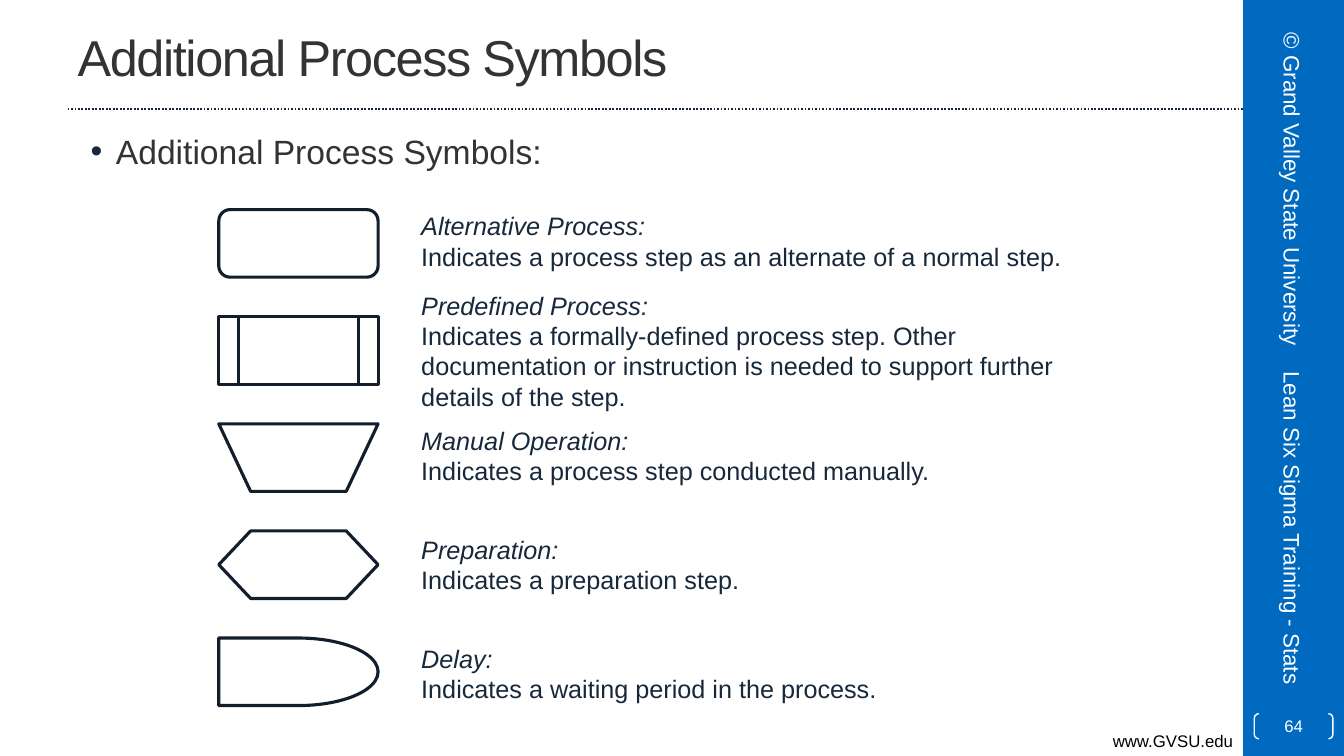
from lxml.etree import SubElement
from pptx import Presentation
from pptx.dml.color import RGBColor
from pptx.enum.dml import MSO_LINE
from pptx.enum.shapes import MSO_CONNECTOR, MSO_SHAPE
from pptx.enum.text import MSO_ANCHOR, MSO_AUTO_SIZE, PP_ALIGN
from pptx.oxml.ns import qn
from pptx.util import Inches, Pt

COLORS = {
    "band": "0069C0",
    "rule": "17273B",
    "heading": "333333",
    "text": "18283B",
    "outline": "121E2C",
    "white": "FFFFFF",
    "black": "000000",
}
FONT = "Arial"

# Symbol, text top, text height, name, meaning
SYMBOLS = [
    (MSO_SHAPE.FLOWCHART_ALTERNATE_PROCESS, 2.04, 0.71, "Alternative Process:",
     "Indicates a process step as an alternate of a normal step."),
    (MSO_SHAPE.FLOWCHART_PREDEFINED_PROCESS, 2.83, 1.31, "Predefined Process:",
     "Indicates a formally-defined process step. Other documentation or "
     "instruction is needed to support further details of the step."),
    (MSO_SHAPE.FLOWCHART_MANUAL_OPERATION, 4.17, 0.71, "Manual Operation:",
     "Indicates a process step conducted manually."),
    (MSO_SHAPE.FLOWCHART_PREPARATION, 5.25, 0.71, "Preparation:",
     "Indicates a preparation step."),
    (MSO_SHAPE.FLOWCHART_DELAY, 6.33, 0.71, "Delay:",
     "Indicates a waiting period in the process."),
]
FIRST_SYMBOL_TOP = 2.08
LAST_SYMBOL_TOP = 6.33
SYMBOL_PITCH = (LAST_SYMBOL_TOP - FIRST_SYMBOL_TOP) / (len(SYMBOLS) - 1)


def color(name):
    return RGBColor.from_string(COLORS[name])


class SlideBuilder:
    def __init__(self, page):
        self.page = page

    def place(self, item, left, top, width, height):
        item.left, item.top = Inches(left), Inches(top)
        item.width, item.height = Inches(width), Inches(height)

    def span(self, para, text, size, ink, italic=False):
        span = para.add_run()
        span.text = text
        span.font.name = FONT
        span.font.size = Pt(size)
        span.font.italic = italic
        span.font.color.rgb = color(ink)
        return span

    def title(self, text):
        box = self.page.shapes.title
        self.place(box, 0.67, 0.03, 11.11, 1.05)
        box.text_frame.auto_size = MSO_AUTO_SIZE.NONE
        box.text_frame.vertical_anchor = MSO_ANCHOR.MIDDLE
        para = box.text_frame.paragraphs[0]
        para.alignment = PP_ALIGN.LEFT
        span = self.span(para, text, 36, "heading")
        span.font._element.set("spc", "-100")

    def body(self, text):
        box = self.page.placeholders[1]
        self.place(box, 0.67, 1.25, 11.11, 6)
        box.text_frame.auto_size = MSO_AUTO_SIZE.NONE
        para = box.text_frame.paragraphs[0]
        props = para._p.get_or_add_pPr()
        props.set("marL", str(Inches(0.38)))
        props.set("indent", str(Inches(-0.25)))
        bullet_color = SubElement(props, qn("a:buClr"))
        SubElement(bullet_color, qn("a:srgbClr"), val=COLORS["text"])
        SubElement(props, qn("a:buFont"), typeface=FONT)
        SubElement(props, qn("a:buChar"), char="•")
        para.space_before = Pt(0)
        self.span(para, text, 24, "heading")

    def shape(self, kind, left, top, width, height, fill=None, line=None, weight=1):
        shape = self.page.shapes.add_shape(
            kind, Inches(left), Inches(top), Inches(width), Inches(height))
        shape.shadow.inherit = False
        if fill:
            shape.fill.solid()
            shape.fill.fore_color.rgb = color(fill)
        else:
            shape.fill.background()
        if line:
            shape.line.color.rgb = color(line)
            shape.line.width = Pt(weight)
        else:
            shape.line.fill.background()
        return shape

    def dotted_rule(self, left, right, y):
        rule = self.page.shapes.add_connector(
            MSO_CONNECTOR.STRAIGHT, Inches(left), Inches(y), Inches(right), Inches(y))
        rule.line.color.rgb = color("rule")
        rule.line.width = Pt(1.25)
        rule.line.dash_style = MSO_LINE.ROUND_DOT
        SubElement(rule._element.spPr, qn("a:effectLst"))

    def text(self, left, top, width, height, lines, size, ink,
             align=PP_ALIGN.LEFT, anchor=MSO_ANCHOR.TOP, rotation=0):
        """Each line is a (text, italic) pair."""
        box = self.page.shapes.add_textbox(
            Inches(left), Inches(top), Inches(width), Inches(height))
        box.rotation = rotation
        frame = box.text_frame
        frame.word_wrap = True
        frame.vertical_anchor = anchor
        if not rotation:
            frame.auto_size = MSO_AUTO_SIZE.SHAPE_TO_FIT_TEXT
        for index, (text, italic) in enumerate(lines):
            para = frame.add_paragraph() if index else frame.paragraphs[0]
            para.alignment = align
            self.span(para, text, size, ink, italic)

    def page_number(self, number):
        badge = self.shape(MSO_SHAPE.DOUBLE_BRACKET, 12.44, 7.08, 0.78, 0.25, line="white")
        badge.adjustments[0] = 0.18
        frame = badge.text_frame
        frame.margin_left = frame.margin_right = 0
        frame.margin_top = frame.margin_bottom = 0
        frame.vertical_anchor = MSO_ANCHOR.MIDDLE
        frame.paragraphs[0].alignment = PP_ALIGN.CENTER
        self.span(frame.paragraphs[0], number, 12, "white")


def main():
    deck = Presentation()
    deck.slide_width, deck.slide_height = Inches(13.33), Inches(7.5)
    builder = SlideBuilder(deck.slides.add_slide(deck.slide_layouts[1]))

    # Side band, rule and web address
    builder.shape(MSO_SHAPE.RECTANGLE, 12.33, 0, 1, 7.5, fill="band")
    builder.dotted_rule(0.67, 12.33, 1.08)
    builder.text(0, 7.2, 12.33, 0.3, [("www.GVSU.edu", False)], 12, "black",
                 align=PP_ALIGN.RIGHT)

    # Title and list
    builder.title("Additional Process Symbols")
    builder.body("Additional Process Symbols:")

    # Symbols with their meanings
    for row, (kind, text_top, text_height, name, meaning) in enumerate(SYMBOLS):
        builder.shape(kind, 2.17, FIRST_SYMBOL_TOP + row * SYMBOL_PITCH, 1.58, 0.67,
                      line="outline", weight=2.25)
        builder.text(4.08, text_top, 6.67, text_height,
                     [(name, True), (meaning, False)], 18, "text")

    # Side band text and page number
    for text, top, align in [
        ("Lean Six Sigma Training - Stats", 5.03, PP_ALIGN.LEFT),
        ("© Grand Valley State University", 1.61, PP_ALIGN.CENTER),
    ]:
        builder.text(11.11, top, 3.42, 0.53, [(text, False)], 16, "white",
                     align=align, anchor=MSO_ANCHOR.MIDDLE, rotation=90)
    builder.page_number("64")

    deck.save("out.pptx")


if __name__ == "__main__":
    main()
